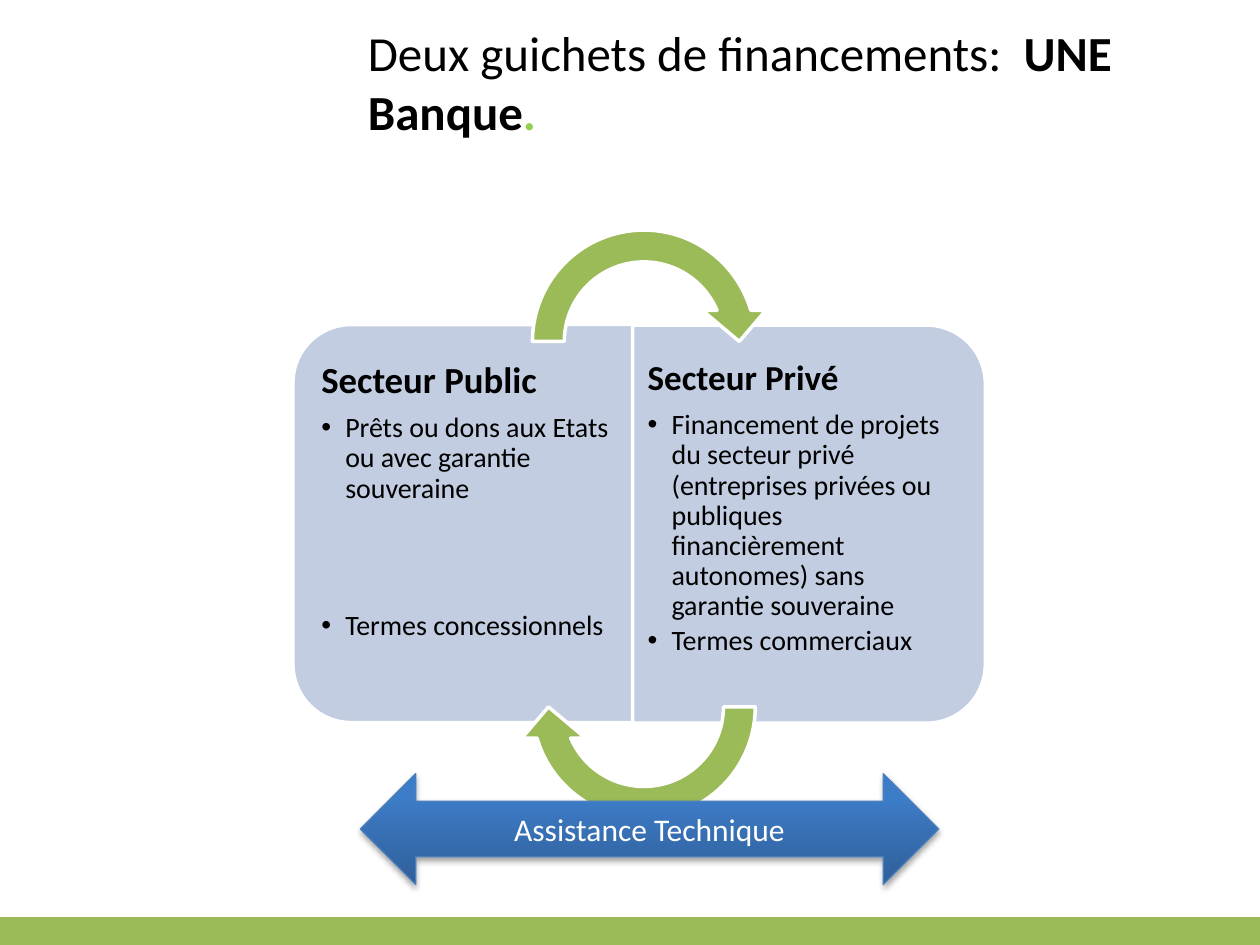
"""Build a slide on the two funding windows of one bank."""
from copy import deepcopy
from dataclasses import dataclass

from lxml import etree
from pptx import Presentation
from pptx.dml.color import RGBColor
from pptx.enum import shapes, text
from pptx.oxml import ns
from pptx.util import Inches, Pt


@dataclass(frozen=True)
class Theme:
    font: str = "Calibri"
    black: str = "000000"
    white: str = "FFFFFF"
    green: str = "9BBB59"
    lime: str = "92D050"
    pale: str = "C2CDE1"
    edge: str = "4B7EBC"
    blend: tuple = ((0, "2F5F99"), (0.8, "3D7CC7"), (1, "3A7CCB"))
    title: float = 28
    label: float = 18
    item: float = 16


@dataclass(frozen=True)
class Box:
    left: float
    top: float
    width: float
    height: float

    def place(self) -> tuple:
        return tuple(map(Inches, (self.left, self.top, self.width, self.height)))


@dataclass(frozen=True)
class Form:
    kind: shapes.MSO_SHAPE
    box: Box
    fill: str
    line: str
    turn: float = 0
    bends: tuple = ()


@dataclass(frozen=True)
class Sector:
    box: Box
    pads: tuple
    head: str
    size: float
    items: tuple
    gap: float = 0


THEME = Theme()
KIND = shapes.MSO_SHAPE
HALF = (0.167, 0)
CURVE = (0.125, 11.423, 204.577, 108, 0.125)

FORMS = (
    Form(KIND.RECTANGLE, Box(0, 7.29, 10, 0.21), THEME.green, THEME.green),
    Form(KIND.ROUND_2_SAME_RECTANGLE, Box(2.13, 2.77, 3.16, 2.77),
         THEME.pale, THEME.white, 270, HALF),
    Form(KIND.ROUND_2_SAME_RECTANGLE, Box(4.84, 2.76, 3.16, 2.8),
         THEME.pale, THEME.white, 90, HALF),
    Form(KIND.CIRCULAR_ARROW, Box(4.1, 1.7, 2.02, 2.02),
         THEME.green, THEME.white, 0, CURVE),
    Form(KIND.CIRCULAR_ARROW, Box(4.1, 4.6, 2.02, 2.02),
         THEME.green, THEME.white, 180, CURVE),
)
SECTORS = (
    Sector(Box(2.46, 2.72, 2.64, 2.89), (0.09, 0.15, 0.13, 0.15), "Secteur Public", 21,
           ("Prêts ou dons aux Etats ou avec garantie souveraine",
            "Termes concessionnels"), 59),
    Sector(Box(5.02, 2.72, 2.66, 2.89), (0.12, 0.14, 0.08, 0.14), "Secteur Privé", 20,
           ("Financement de projets du secteur privé (entreprises privées ou publiques "
            "financièrement autonomes) sans garantie souveraine",
            "Termes commerciaux")),
)


def hue(code: str) -> RGBColor:
    return RGBColor.from_string(code)


def style(para, size: float, code: str, bold: bool = False) -> None:
    font = para.font
    font.name, font.size, font.bold = THEME.font, Pt(size), bold
    font.color.rgb = hue(code)


def move(holder, box: Box) -> None:
    holder.left, holder.top, holder.width, holder.height = box.place()
    frame = holder.text_frame
    frame.word_wrap = True
    frame.auto_size = text.MSO_AUTO_SIZE.NONE
    frame.vertical_anchor = text.MSO_ANCHOR.TOP


def draw(slide, form: Form):
    shape = slide.shapes.add_shape(form.kind, *form.box.place())
    shape.shadow.inherit = False
    shape.rotation = form.turn
    for index, bend in enumerate(form.bends):
        shape.adjustments[index] = bend
    shape.fill.solid()
    shape.fill.fore_color.rgb = hue(form.fill)
    shape.line.color.rgb = hue(form.line)
    shape.line.width = Pt(2)
    return shape


def mark(para, sign: str = "") -> None:
    props = para._p.get_or_add_pPr()
    indent = Inches(0.19) if sign else 0
    props.set("marL", str(indent))
    props.set("indent", str(-indent))
    node = etree.SubElement(props, ns.qn("a:buChar" if sign else "a:buNone"))
    if sign:
        node.set("char", sign)


def fill_list(holder, sector: Sector) -> None:
    move(holder, sector.box)
    frame = holder.text_frame
    (frame.margin_left, frame.margin_top,
     frame.margin_right, frame.margin_bottom) = map(Inches, sector.pads)
    for index, words in enumerate((sector.head, *sector.items)):
        para = frame.add_paragraph() if index else frame.paragraphs[0]
        para.text = words
        para.level = 1 if index else 0
        para.line_spacing = 0.9
        para.space_before = Pt(sector.gap if index == 2 else 0)
        para.space_after = Pt(2.4 if index else 7)
        mark(para, "•" if index else "")
        style(para, THEME.item if index else sector.size, THEME.black, not index)


def write_title(holder) -> None:
    move(holder, Box(2.82, 0.13, 6.73, 1.04))
    para = holder.text_frame.paragraphs[0]
    para.alignment = text.PP_ALIGN.LEFT
    style(para, THEME.title, THEME.black)
    for words, bold, code in (("Deux guichets de financements:  ", False, THEME.black),
                              ("UNE Banque", True, THEME.black),
                              (".", True, THEME.lime)):
        run = para.add_run()
        run.text, run.font.bold = words, bold
        run.font.color.rgb = hue(code)


def draw_help(slide) -> None:
    shape = draw(slide, Form(KIND.LEFT_RIGHT_ARROW, Box(2.86, 6.14, 4.59, 0.88),
                             THEME.edge, THEME.edge))
    shape.line.width = Pt(0.75)
    shape.fill.gradient()
    shape.fill.gradient_angle = 90
    last = shape.element.findall(".//" + ns.qn("a:gs"))[-1]
    last.addnext(deepcopy(last))
    for stop, (spot, code) in zip(shape.fill.gradient_stops, THEME.blend):
        stop.position = spot
        stop.color.rgb = hue(code)
    effects = shape.element.spPr.find(ns.qn("a:effectLst"))
    shade = etree.SubElement(effects, ns.qn("a:outerShdw"), blurRad=str(Pt(3.1)),
                             dist=str(Pt(1.8)), dir="5400000", rotWithShape="0")
    tint = etree.SubElement(shade, ns.qn("a:srgbClr"), val=THEME.black)
    etree.SubElement(tint, ns.qn("a:alpha"), val="35000")
    frame = shape.text_frame
    frame.vertical_anchor = text.MSO_ANCHOR.MIDDLE
    para = frame.paragraphs[0]
    para.text = "Assistance Technique"
    para.alignment = text.PP_ALIGN.CENTER
    style(para, THEME.label, THEME.white)


def main() -> None:
    deck = Presentation()
    deck.slide_width, deck.slide_height = Inches(10), Inches(7.5)
    slide = deck.slides.add_slide(deck.slide_layouts[3])
    title, *bodies = slide.placeholders
    write_title(title)
    bar, *panels = [draw(slide, form) for form in FORMS]
    for holder, sector, panel in zip(bodies, SECTORS, panels):
        fill_list(holder, sector)
        panel.element.addnext(holder.element)
    draw_help(slide)
    deck.save("out.pptx")


if __name__ == "__main__":
    main()
